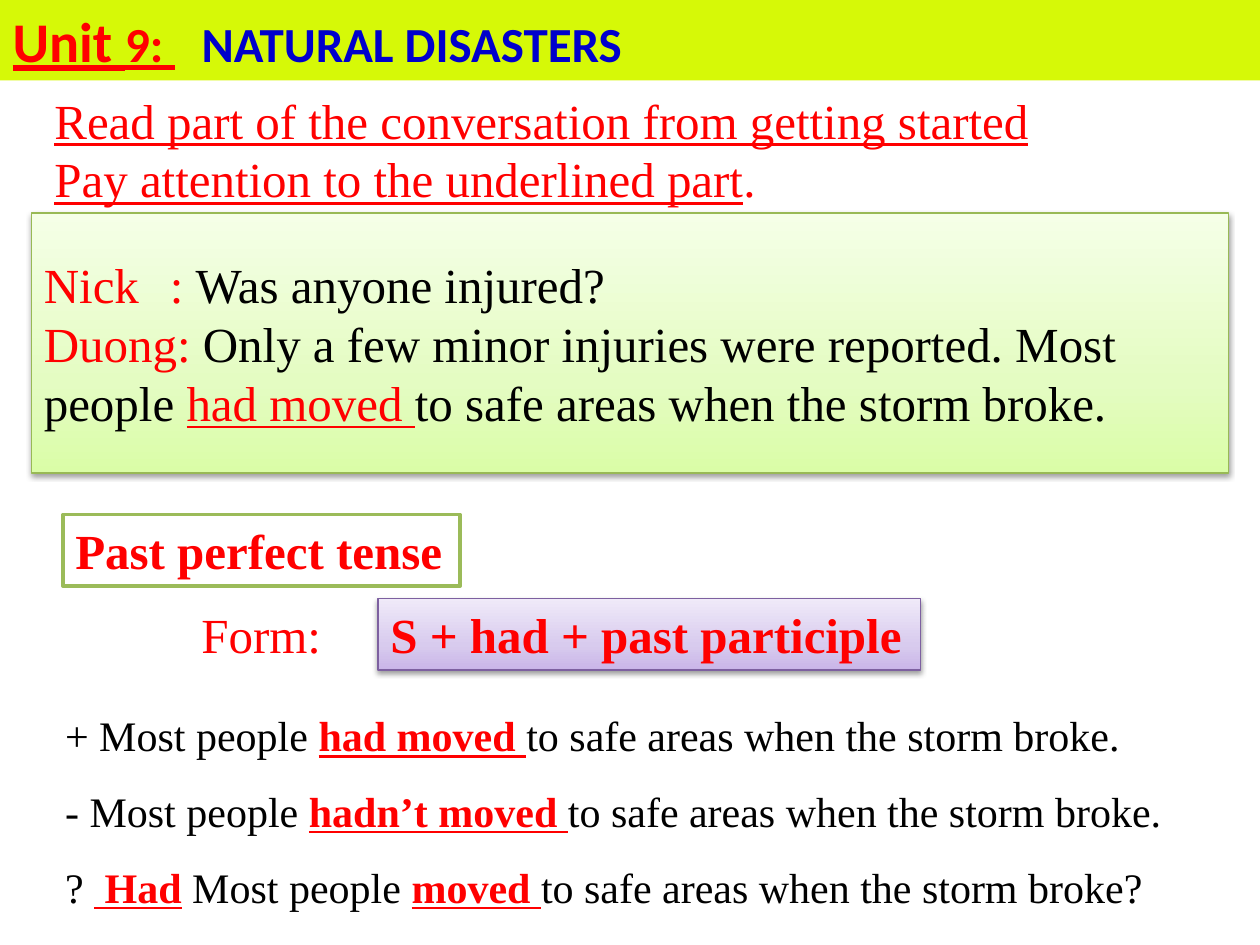
from lxml import etree
from pptx import Presentation
from pptx.dml.color import RGBColor
from pptx.enum.shapes import MSO_SHAPE
from pptx.enum.text import MSO_ANCHOR, PP_ALIGN
from pptx.oxml import parse_xml
from pptx.oxml.ns import nsdecls, qn
from pptx.util import Pt

RECT = MSO_SHAPE.RECTANGLE
TOP, MIDDLE = MSO_ANCHOR.TOP, MSO_ANCHOR.MIDDLE
LEFT = PP_ALIGN.LEFT
SERIF, SANS = "Times New Roman", "Calibri"

HEX = {
    "red": "FF0000", "blue": "0000CC", "black": "000000", "white": "FFFFFF",
    "lime": "D6F907", "green": "9BBB59", "leaf": "98B955", "plum": "7D60A0",
}
FADES = {
    "leaf": [(0, "DAFDA7"), (35, "E4FCC2"), (100, "F5FFE7")],
    "plum": [(0, "C9B5E8"), (35, "D8CBEE"), (100, "F0EAF9")],
}


def write(shape, paras, size=28, face=SERIF, wrap=True, anchor=TOP, tab=None, gap=0):
    """Each run is (text, colour, style, size); style holds b and/or u."""
    frame = shape.text_frame
    frame.word_wrap = wrap
    frame.vertical_anchor = anchor
    for i, runs in enumerate(paras):
        para = frame.add_paragraph() if i else frame.paragraphs[0]
        props = para._p.get_or_add_pPr()
        props.set("marL", "0")
        props.set("indent", "0")
        etree.SubElement(props, qn("a:buNone"))
        if tab:
            stops = etree.SubElement(props, qn("a:tabLst"))
            etree.SubElement(stops, qn("a:tab"), pos=str(Pt(tab)), algn="l")
        para.alignment = LEFT
        para.space_before = Pt(gap if i else 0)
        for text, tint, style, *own in runs:
            run = para.add_run()
            run.text = text
            font = run.font
            font.name = face
            font.size = Pt(own[0] if own else size)
            font.bold = "b" in style
            font.underline = "u" in style
            font.color.rgb = RGBColor.from_string(HEX[tint])


def panel(box, line, width, fade=False):
    """A rectangle, white or with a shaded fill and a soft shadow."""
    shape = slide.shapes.add_shape(RECT, *map(Pt, box))
    shape.shadow.inherit = False
    shape.line.color.rgb = RGBColor.from_string(HEX[line])
    shape.line.width = Pt(width)
    shape.fill.solid()
    shape.fill.fore_color.rgb = RGBColor.from_string(HEX["white"])
    if fade:
        props = shape._element.spPr
        stops = "".join(
            f'<a:gs pos="{pos * 1000}"><a:srgbClr val="{tint}"/></a:gs>'
            for pos, tint in FADES[line])
        props.replace(props.find(qn("a:solidFill")), parse_xml(
            f'<a:gradFill {nsdecls("a")} rotWithShape="1"><a:gsLst>{stops}</a:gsLst>'
            '<a:lin ang="16200000" scaled="0"/></a:gradFill>'))
        props.find(qn("a:effectLst")).append(parse_xml(
            f'<a:outerShdw {nsdecls("a")} blurRad="{Pt(3.1)}" dist="{Pt(1.6)}" '
            'dir="5400000" rotWithShape="0"><a:srgbClr val="000000">'
            '<a:alpha val="38000"/></a:srgbClr></a:outerShdw>'))
    return shape


deck = Presentation()
deck.slide_width, deck.slide_height = Pt(720), Pt(540)
slide = deck.slides.add_slide(deck.slide_layouts[1])
title, body = slide.placeholders

# Unit title band
title.left, title.top, title.width, title.height = map(Pt, (0, 0, 720, 46))
title.fill.solid()
title.fill.fore_color.rgb = RGBColor.from_string(HEX["lime"])
write(title, [[("Unit ", "red", "bu", 32), ("9: ", "red", "bu"),
               ("\tNATURAL DISASTERS", "blue", "b")]], face=SANS, tab=108.5)

# Task
task = slide.shapes.add_textbox(Pt(24), Pt(48), Pt(666), Pt(75))
write(task, [[("Read part of the conversation from getting started", "red", "u")],
             [("Pay attention to the underlined part", "red", "u"), (".", "red", "")]])

# Conversation
talk = panel((18, 121.75, 684, 148.5), "leaf", 0.75, fade=True)
write(talk, [
    [("Nick\t: ", "red", ""), ("Was anyone injured?", "black", "")],
    [("Duong: ", "red", ""),
     ("Only a few minor injuries were reported. Most people ", "black", ""),
     ("had moved ", "red", "u"),
     ("to safe areas when the storm broke.", "black", "")],
], anchor=MIDDLE, tab=75.5)

# Tense and its form
tense = panel((36, 294, 227, 41), "green", 2)
write(tense, [[("Past perfect tense", "red", "b")]], wrap=False)
form = slide.shapes.add_textbox(Pt(108), Pt(342), Pt(83.5), Pt(41))
write(form, [[("Form:", "red", "")]], wrap=False)
rule = panel((216, 342, 310, 41), "plum", 0.75, fade=True)
write(rule, [[("S + had + past participle", "red", "b")]], wrap=False)

# Example sentences
body.left, body.top, body.width, body.height = map(Pt, (30, 402, 690, 120))
end = "to safe areas when the storm broke"
write(body, [
    [("+ Most people ", "black", ""), ("had moved ", "red", "bu"),
     (end + ".", "black", "")],
    [("- Most people ", "black", ""), ("hadn’t moved ", "red", "bu"),
     (end + ".", "black", "")],
    [("? ", "black", ""), (" Had", "red", "bu"), (" Most people ", "black", ""),
     ("moved ", "red", "bu"), (end + "?", "black", "")],
], size=24, gap=14.5)

deck.save("out.pptx")
